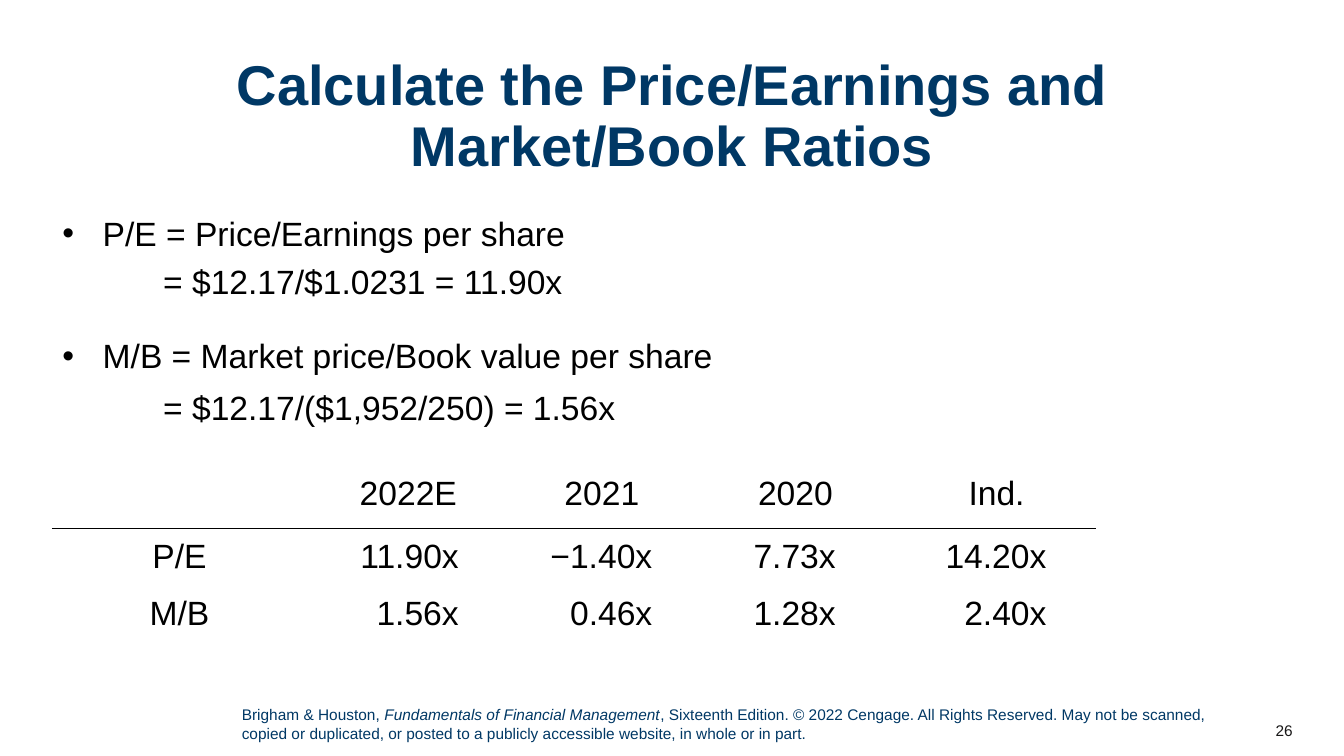
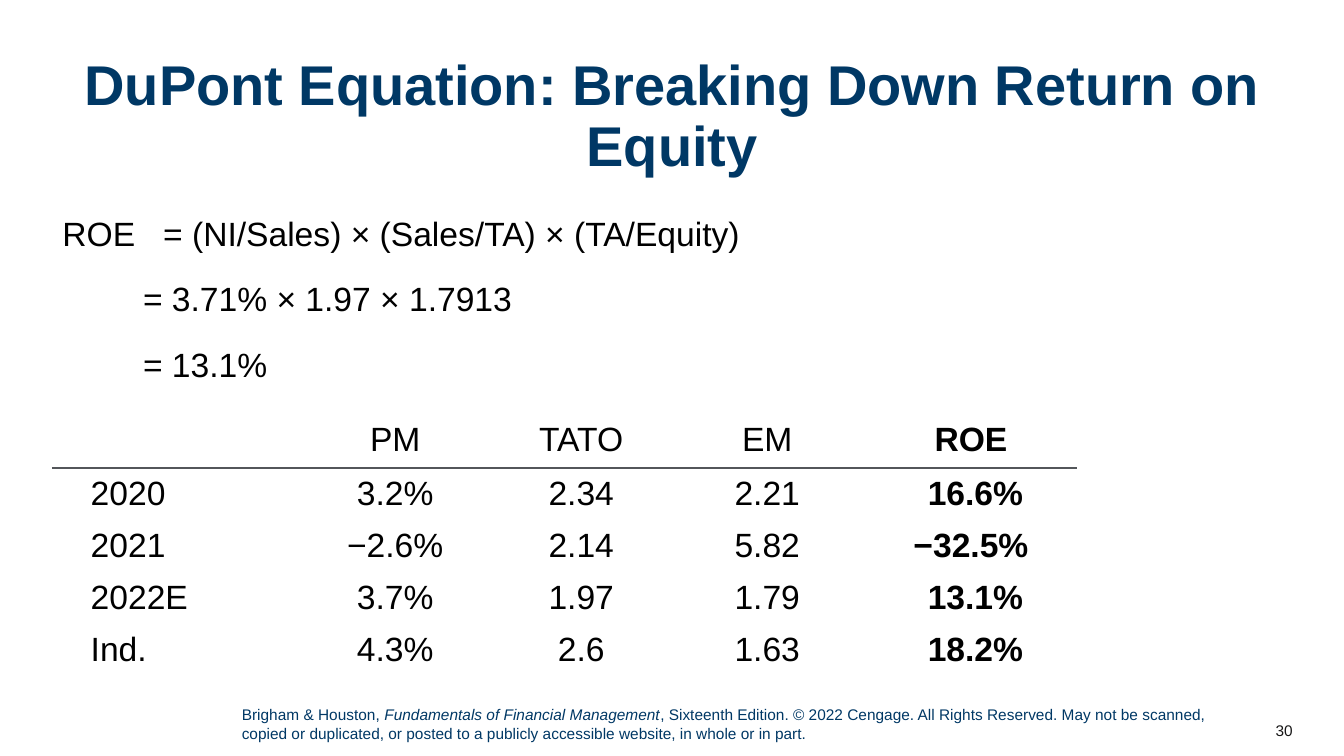
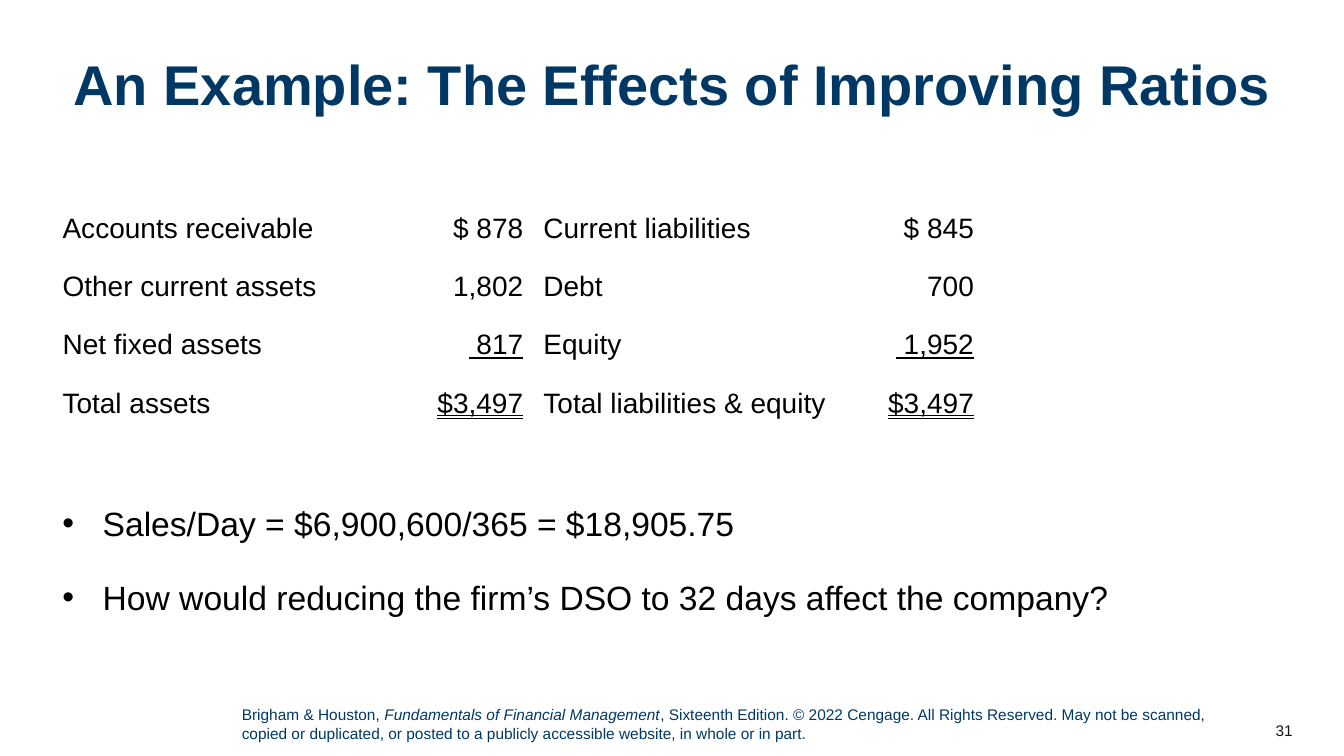
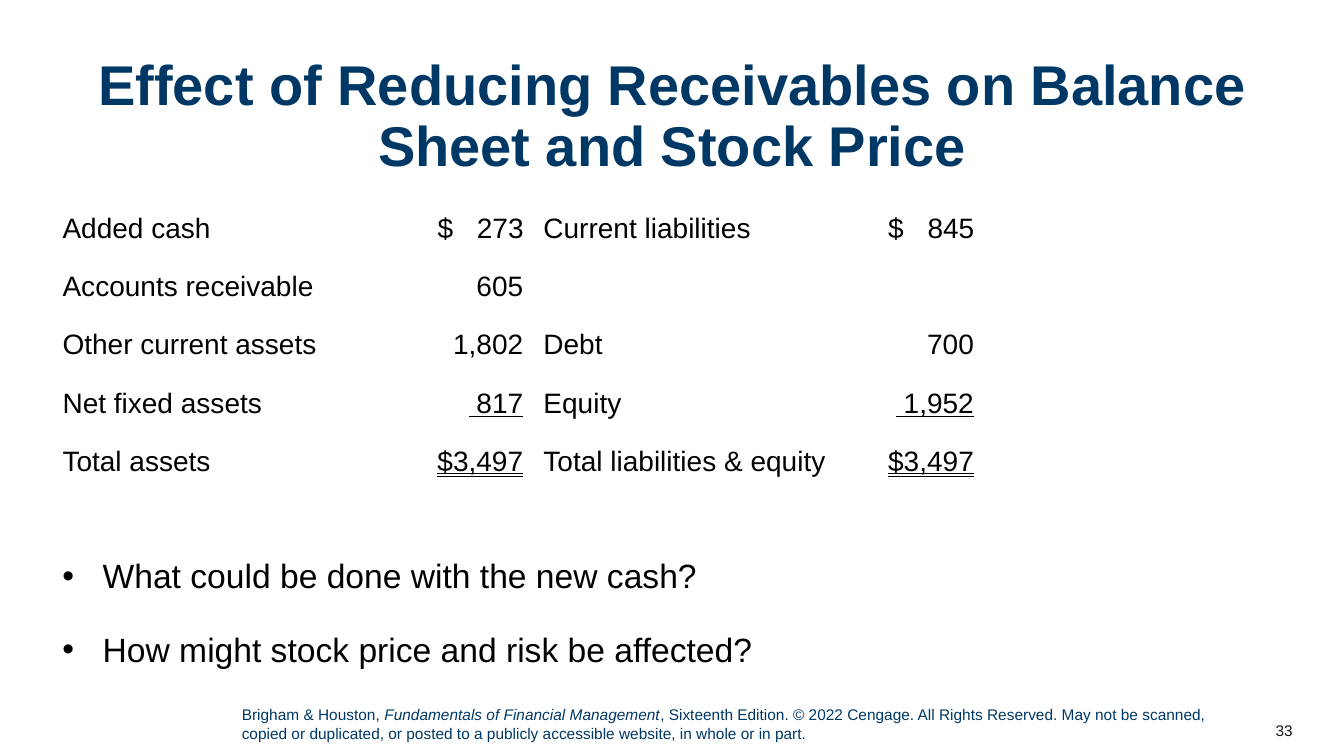
import pptx
import pptx.dml.color
import pptx.enum.text
import pptx.oxml
import pptx.oxml.ns
import pptx.util
from pptx.util import Inches

COLORS = {
    "navy": "003865",
    "black": "000000",
    "number": "181717",
    "gray": "53565A",
    "white": "FFFFFF",
}
FONT = "Arial"
LEFT, WIDTH = 0.52, 12.29
BODY_TOP = 2.06
BODY_SIZE, BALANCE_SIZE, FOOTER_SIZE = 24, 20, 11
INSET = 0.1
CENTER = pptx.enum.text.PP_ALIGN.CENTER
RIGHT = pptx.enum.text.PP_ALIGN.RIGHT
MIDDLE = pptx.enum.text.MSO_ANCHOR.MIDDLE
DOUBLE = pptx.enum.text.MSO_UNDERLINE.DOUBLE_LINE
BALANCE_COLUMNS = [3.07, 1.7, 3.07, 1.4]
BALANCE_ROW = 0.58
# Balance sheet rows that both versions share
OTHER_ASSETS = ["Other current assets", "1,802", "Debt", "700"]
BALANCE_END = [
    ["Net fixed assets", " 817", "Equity", " 1,952"],
    ["Total assets", "$3,497", "Total liabilities & equity", "$3,497"],
]


# Text
def add_span(para, text, size, color="black", bold=False, italic=False, underline=None):
    span = para.add_run()
    span.text = text
    font = span.font
    font.name = FONT
    font.size = pptx.util.Pt(size)
    font.bold = bold
    font.italic = italic
    font.underline = underline
    font.color.rgb = pptx.dml.color.RGBColor.from_string(COLORS[color])


def append_xml(parent, markup):
    namespace = pptx.oxml.ns.nsdecls("a")
    tag, rest = markup.split(" ", 1)
    parent.append(pptx.oxml.parse_xml(f"{tag} {namespace} {rest}"))


def add_tab(para, position):
    append_xml(para._p.get_or_add_pPr(),
               f'<a:tabLst ><a:tab pos="{Inches(position)}" algn="l"/></a:tabLst>')


def add_bullet(para):
    properties = para._p.get_or_add_pPr()
    append_xml(properties, f'<a:buClr ><a:srgbClr val="{COLORS["black"]}"/></a:buClr>')
    append_xml(properties, f'<a:buFont typeface="{FONT}"/>')
    append_xml(properties, '<a:buChar char="•"/>')


def set_indent(para, left, first=0):
    properties = para._p.get_or_add_pPr()
    properties.set("marL", str(Inches(left)))
    properties.set("indent", str(Inches(first)))


def add_box(page, left, top, width, height):
    box = page.shapes.add_textbox(Inches(left), Inches(top), Inches(width), Inches(height))
    box.text_frame.word_wrap = True
    return box.text_frame


def add_body(page, top, height, lines):
    """Each line is text, indent (None for a bullet), space before, space after."""
    frame = add_box(page, LEFT, top, WIDTH, height)
    for index, (text, indent, before, after) in enumerate(lines):
        para = frame.add_paragraph() if index else frame.paragraphs[0]
        if indent is None:
            add_bullet(para)
            set_indent(para, 0.4, -0.4)
        else:
            set_indent(para, indent)
        if "\t" in text:
            add_tab(para, 1.1)
        para.space_before = pptx.util.Pt(before if index else 0)
        para.space_after = pptx.util.Pt(after)
        add_span(para, text, BODY_SIZE)


# Title, footer and page number of every slide
def add_page(deck, title, number):
    page = deck.slides.add_slide(deck.slide_layouts[6])

    frame = add_box(page, 12.12, 7.05, 0.8, 0.4)
    frame.vertical_anchor = MIDDLE
    frame.paragraphs[0].alignment = RIGHT
    add_span(frame.paragraphs[0], str(number), FOOTER_SIZE, "number")

    para = add_box(page, 2.3, 6.95, 9.8, 0.47).paragraphs[0]
    add_span(para, "Brigham & Houston, ", FOOTER_SIZE, "navy")
    add_span(para, "Fundamentals of Financial Management", FOOTER_SIZE, "navy", italic=True)
    add_span(para, ", Sixteenth Edition. © 2022 Cengage. All Rights Reserved. May not be "
             "scanned, copied or duplicated, or posted to a publicly accessible website, "
             "in whole or in part.", FOOTER_SIZE, "navy")

    para = add_box(page, LEFT, 0.52, WIDTH, 1.33).paragraphs[0]
    para.alignment = CENTER
    para.line_spacing = 0.9
    add_span(para, title, 40, "navy", bold=True)
    return page


# Tables
def add_grid(page, top, columns, row_heights):
    table = page.shapes.add_table(
        len(row_heights), len(columns), Inches(LEFT), Inches(top),
        Inches(sum(columns)), Inches(sum(row_heights))).table
    table.first_row = False
    table.horz_banding = False
    for column, width in zip(table.columns, columns):
        column.width = Inches(width)
    for row, height in zip(table.rows, row_heights):
        row.height = Inches(height)
    return table


def add_rule(cell, side, color):
    append_xml(cell._tc.get_or_add_tcPr(),
               f'<a:ln{side} w="12700"><a:solidFill><a:srgbClr val="{COLORS[color]}"/>'
               f'</a:solidFill></a:ln{side}>')


def add_ratio_table(page, top, columns, row_heights, rows, rule, style_cell):
    """A heading row over a rule; style_cell sets alignment and margins below it."""
    table = add_grid(page, top, columns, row_heights)
    for row, texts in enumerate(rows):
        for column, text in enumerate(texts):
            cell = table.cell(row, column)
            if row < 2:
                add_rule(cell, "T" if row else "B", rule)
            cell.fill.background()
            if not text:
                continue
            para = cell.text_frame.paragraphs[0]
            para.alignment = CENTER
            if row:
                cell.vertical_anchor = MIDDLE
                style_cell(cell, para, column, text)
            add_span(para, text, BODY_SIZE, bold=rows[0][column] == "ROE")


def align_multiples(cell, para, column, text):
    if column:
        para.alignment = RIGHT
        cell.margin_right = Inches([0.51, 0.41, 0.61, 0.49][column - 1])


def align_dupont(cell, para, column, text):
    if column == 0:
        para.alignment = pptx.enum.text.PP_ALIGN.LEFT
        cell.margin_left = Inches(0.38)
    elif column == 4 and not text.startswith("−"):
        cell.margin_left = Inches(0.19)


def add_balance_sheet(page, rows):
    table = add_grid(page, BODY_TOP, BALANCE_COLUMNS, [BALANCE_ROW] * len(rows))
    underlines = {len(rows) - 2: True, len(rows) - 1: DOUBLE}
    for row, texts in enumerate(rows):
        for column, text in enumerate(texts):
            cell = table.cell(row, column)
            cell.fill.solid()
            cell.fill.fore_color.rgb = pptx.dml.color.RGBColor.from_string(COLORS["white"])
            if not text:
                continue
            para = cell.text_frame.paragraphs[0]
            is_amount = column % 2 == 1
            if "\t" in text:
                cell.margin_left = Inches(BALANCE_COLUMNS[column] - INSET - 0.85)
                cell.margin_right = Inches(INSET / 2)
                add_tab(para, 0.39)
            elif is_amount:
                para.alignment = RIGHT
            add_span(para, text, BALANCE_SIZE,
                     underline=underlines.get(row) if is_amount else None)


# Slides
def add_market_ratios(deck):
    page = add_page(deck, "Calculate the Price/Earnings and Market/Book Ratios", 26)
    add_body(page, BODY_TOP, 2.25, [
        ("P/E = Price/Earnings per share", None, 0, 6),
        ("= $12.17/$1.0231 = 11.90x", 1, 0, 6),
        ("M/B = Market price/Book value per share", None, 18, 8),
        ("= $12.17/($1,952/250) = 1.56x", 1, 0, 8),
    ])
    add_ratio_table(page, 4.66, [2.52, 2.02, 1.82, 2.02, 1.97], [0.58, 0.57, 0.57], [
        ["", "2022E", "2021", "2020", "Ind."],
        ["P/E", "11.90x", "−1.40x", "7.73x", "14.20x"],
        ["M/B", "1.56x", "0.46x", "1.28x", "2.40x"],
    ], "black", align_multiples)


def add_dupont(deck):
    page = add_page(deck, "DuPont Equation: Breaking Down Return on Equity", 30)
    add_body(page, BODY_TOP, 1.85, [
        ("ROE\t= (NI/Sales) × (Sales/TA) × (TA/Equity)", 0, 10, 8),
        ("= 3.71% × 1.97 × 1.7913", 0.8, 10, 8),
        ("= 13.1%", 0.8, 10, 8),
    ])
    rows = [
        ["", "PM", "TATO", "EM", "ROE"],
        ["2020", "3.2%", "2.34", "2.21", "16.6%"],
        ["2021", "−2.6%", "2.14", "5.82", "−32.5%"],
        ["2022E", "3.7%", "1.97", "1.79", "13.1%"],
        ["Ind.", "4.3%", "2.6", "1.63", "18.2%"],
    ]
    add_ratio_table(page, 4.13, [2.43, 1.94, 1.75, 1.94, 2.1],
                    [2.57 / len(rows)] * len(rows), rows, "gray", align_dupont)


def add_balance_page(deck, title, number, rows, body_top, bullets):
    page = add_page(deck, title, number)
    add_balance_sheet(page, rows + BALANCE_END)
    add_body(page, body_top, 1.33, [(text, None, 12, 12) for text in bullets])


def main():
    deck = pptx.Presentation()
    deck.slide_width, deck.slide_height = Inches(13.33), Inches(7.5)
    add_market_ratios(deck)
    add_dupont(deck)
    add_balance_page(
        deck, "An Example: The Effects of Improving Ratios", 31,
        [["Accounts receivable", "$ 878", "Current liabilities", "$ 845"], OTHER_ASSETS],
        4.94,
        ["Sales/Day = $6,900,600/365 = $18,905.75",
         "How would reducing the firm’s DSO to 32 days affect the company?"])
    add_balance_page(
        deck, "Effect of Reducing Receivables on Balance Sheet and Stock Price", 33,
        [["Added cash", "$\t273", "Current liabilities", "$\t845"],
         ["Accounts receivable", "605", "", ""], OTHER_ASSETS],
        5.46,
        ["What could be done with the new cash?",
         "How might stock price and risk be affected?"])
    deck.save("out.pptx")


if __name__ == "__main__":
    main()
